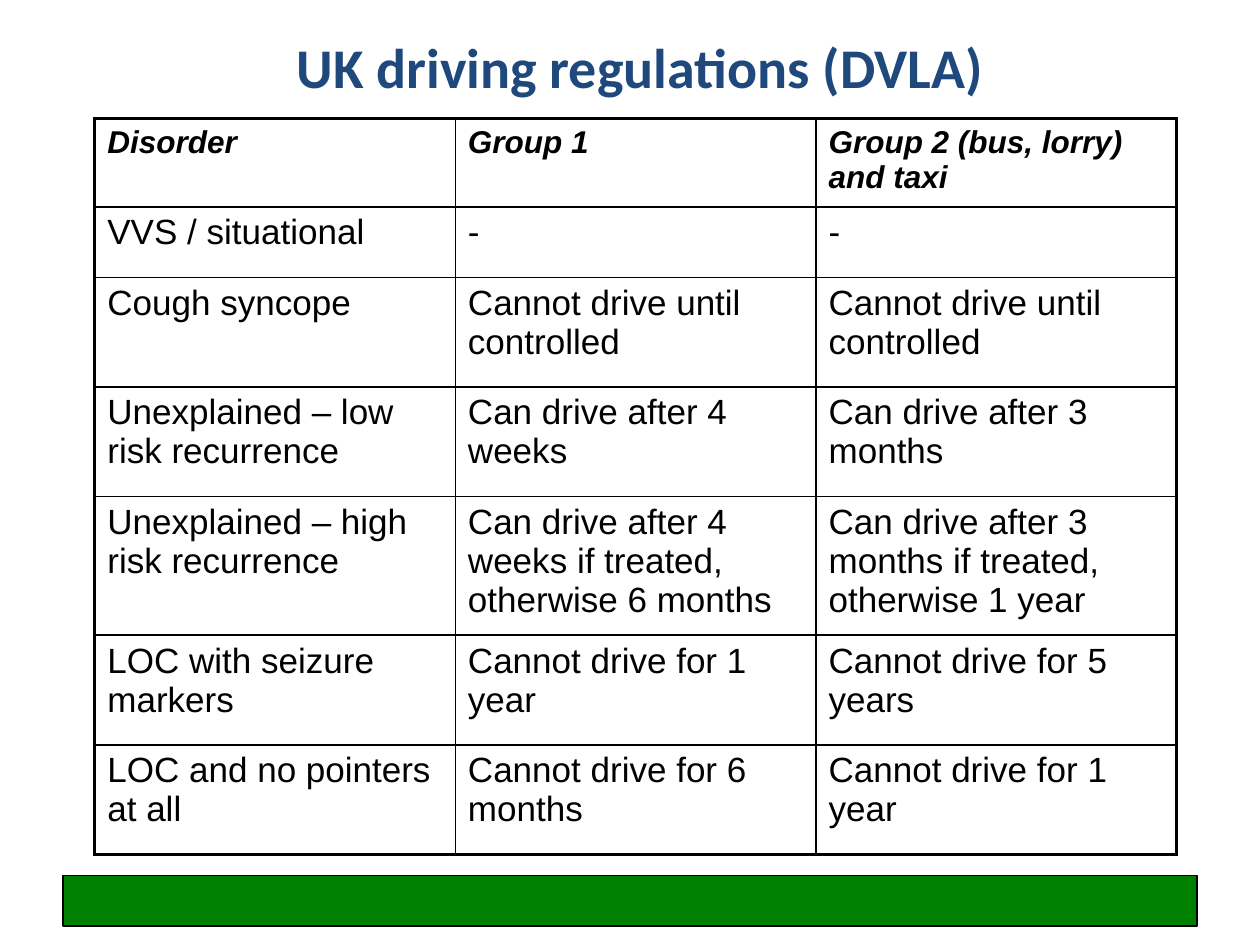
from lxml import etree
from pptx import Presentation
from pptx.dml.color import RGBColor
from pptx.enum.shapes import MSO_SHAPE
from pptx.enum.text import MSO_ANCHOR, PP_ALIGN
from pptx.oxml.ns import qn
from pptx.util import Cm, Pt

RECT = MSO_SHAPE.RECTANGLE
MIDDLE = MSO_ANCHOR.MIDDLE
LEFT, CENTER = PP_ALIGN.LEFT, PP_ALIGN.CENTER

COLORS = {"title": "1F497D", "text": "000000", "line": "000000", "bar": "008000"}
THIN, THICK = 1, 2.25

ROWS = [
    ("Disorder", "Group 1", "Group 2 (bus, lorry) and taxi"),
    ("VVS / situational", "-", "-"),
    ("Cough syncope", "Cannot drive until controlled", "Cannot drive until controlled"),
    ("Unexplained – low risk recurrence", "Can drive after 4 weeks", "Can drive after 3 months"),
    ("Unexplained – high risk recurrence",
     "Can drive after 4 weeks if treated, otherwise 6 months",
     "Can drive after 3 months if treated, otherwise 1 year"),
    ("LOC with seizure markers", "Cannot drive for 1 year", "Cannot drive for 5 years"),
    ("LOC and no pointers at all", "Cannot drive for 6 months", "Cannot drive for 1 year"),
]
HEIGHTS = [1.73, 1.42, 2.21, 2.21, 2.46, 2.21, 2.21]
COL_WIDTH = 7.27


def color(name):
    return RGBColor.from_string(COLORS[name])


def write(frame, text, size=20, font="Arial", tint="text", bold=False,
          italic=False, align=LEFT):
    frame.word_wrap = True
    para = frame.paragraphs[0]
    para.alignment = align
    run = para.add_run()
    run.text = text
    run.font.size, run.font.name = Pt(size), font
    run.font.bold, run.font.italic = bold, italic
    run.font.color.rgb = color(tint)


def border(cell, side, width):
    props = cell._tc.get_or_add_tcPr()
    line = etree.SubElement(props, qn("a:ln" + side), w=str(Pt(width)))
    fill = etree.SubElement(line, qn("a:solidFill"))
    etree.SubElement(fill, qn("a:srgbClr"), val=COLORS["line"])


class Page:
    """Holds the slide and its font styles."""

    head = {"size": 18, "bold": True, "italic": True}
    body = {"size": 20}
    title_style = {"size": 32, "font": "Calibri", "tint": "title",
                   "bold": True, "align": CENTER}

    def __init__(self, slide):
        self.slide = slide

    def bar(self, left, top, width, height):
        shape = self.slide.shapes.add_shape(
            RECT, Cm(left), Cm(top), Cm(width), Cm(height))
        shape.shadow.inherit = False
        shape.fill.solid()
        shape.fill.fore_color.rgb = color("bar")
        shape.line.color.rgb = color("line")
        shape.line.width = Pt(0.75)

    def title(self, text, left, top, width, height):
        box = self.slide.shapes.add_textbox(
            Cm(left), Cm(top), Cm(width), Cm(height))
        box.text_frame.vertical_anchor = MIDDLE
        write(box.text_frame, text, **self.title_style)

    def table(self, rows, heights, left, top, col_width):
        count, cols = len(rows), len(rows[0])
        grid = self.slide.shapes.add_table(
            count, cols, Cm(left), Cm(top),
            Cm(col_width * cols), Cm(sum(heights))).table
        grid.first_row = grid.horz_banding = False
        for col in grid.columns:
            col.width = Cm(col_width)
        for r, (texts, height) in enumerate(zip(rows, heights)):
            grid.rows[r].height = Cm(height)
            for c, text in enumerate(texts):
                cell = grid.cell(r, c)
                # Thick lines on the outer edge only
                edges = {"L": c == 0, "R": c == cols - 1,
                         "T": r == 0, "B": r == count - 1}
                for side, outer in edges.items():
                    border(cell, side, THICK if outer else THIN)
                cell.fill.background()
                write(cell.text_frame, text, **(self.body if r else self.head))


def main():
    deck = Presentation()
    deck.slide_width, deck.slide_height = Cm(25.4), Cm(19.05)
    page = Page(deck.slides.add_slide(deck.slide_layouts[6]))

    # Footer bar
    page.bar(1.27, 17.65, 22.86, 1.02)
    # Heading
    page.title("UK driving regulations (DVLA)", 2.11, 0.28, 21.59, 2.11)
    # Rules by disorder and licence group
    page.table(ROWS, HEIGHTS, 1.91, 2.39, COL_WIDTH)

    deck.save("out.pptx")


if __name__ == "__main__":
    main()
